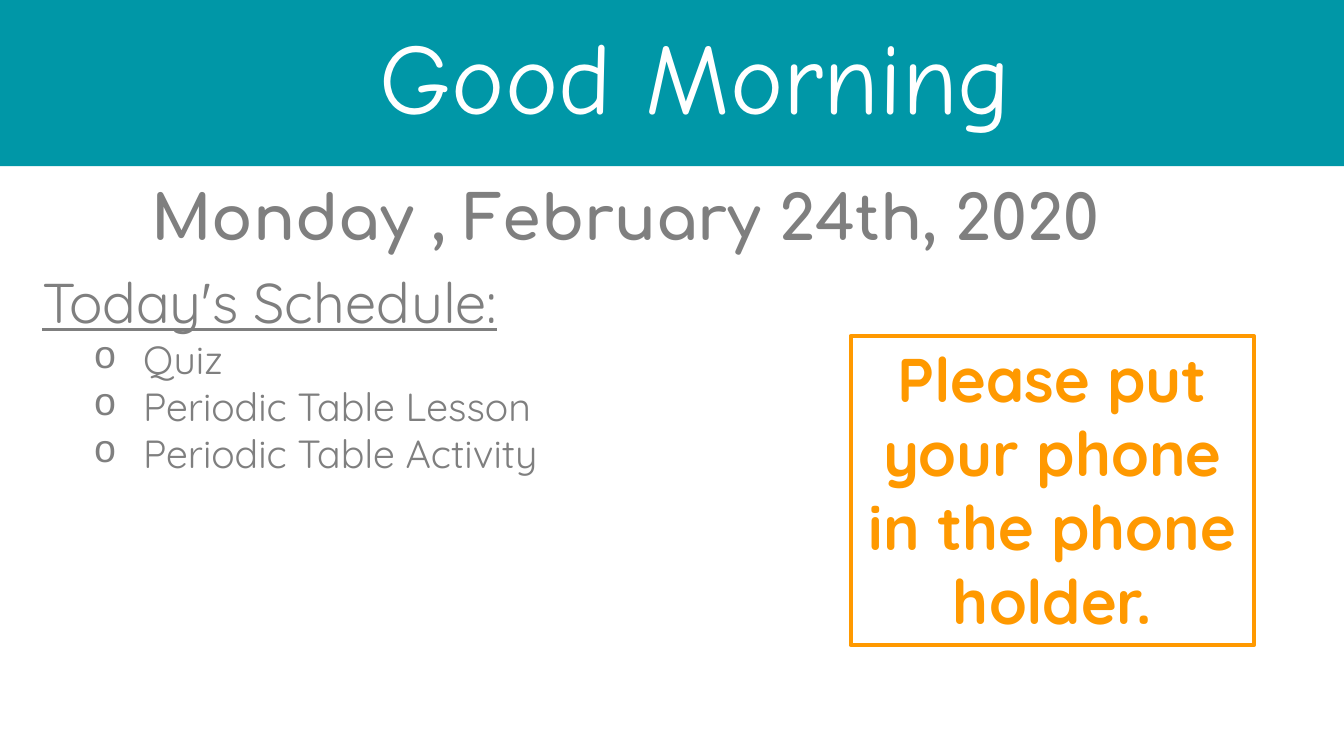
from lxml import etree
from pptx import Presentation
from pptx.dml.color import RGBColor
from pptx.enum.shapes import MSO_SHAPE
from pptx.enum.text import MSO_ANCHOR, PP_ALIGN
from pptx.oxml.ns import qn
from pptx.util import Inches, Pt

RECTANGLE = MSO_SHAPE.RECTANGLE
TOP, MIDDLE = MSO_ANCHOR.TOP, MSO_ANCHOR.MIDDLE
LEFT, CENTER = PP_ALIGN.LEFT, PP_ALIGN.CENTER

TEAL = RGBColor(0x00, 0x97, 0xA7)
GRAY = RGBColor(0x7F, 0x7F, 0x7F)
ORANGE = RGBColor(0xFF, 0x99, 0x00)
WHITE = RGBColor(0xFF, 0xFF, 0xFF)

WIDTH = 10
HEIGHT = WIDTH * 9 / 16
TITLE_FONT, DATE_FONT, BODY_FONT = "Comic Neue", "Comfortaa", "Quicksand"
BULLET_FONT = "Courier New"

TASKS = ["Quiz", "Periodic Table Lesson", "Periodic Table Activity"]


def inner_box(box, left, top, width, height):
    """Return the part of a box given by percentages of its width and height."""
    x, y, w, h = box
    return (x + left * w / 100, y + top * h / 100,
            width * w / 100, height * h / 100)


def set_frame(shape, anchor=TOP):
    frame = shape.text_frame
    frame.word_wrap = True
    frame.vertical_anchor = anchor
    frame.margin_left = frame.margin_right = Inches(0.07)
    frame.margin_top = frame.margin_bottom = Inches(0.04)
    return frame


def add_text_frame(page, box, anchor=TOP):
    return set_frame(page.shapes.add_textbox(*map(Inches, box)), anchor)


def add_rectangle(page, box):
    shape = page.shapes.add_shape(RECTANGLE, *map(Inches, box))
    shape.shadow.inherit = False
    return shape


def write(para, text, font=BODY_FONT, size=33, color=GRAY, bold=False,
          underline=False, align=LEFT, spacing=1.0):
    para.alignment = align
    para.line_spacing = spacing
    span = para.add_run()
    span.text = text
    span.font.name = font
    span.font.size = Pt(size)
    span.font.color.rgb = color
    span.font.bold = bold
    span.font.underline = underline


def add_bullet(para, color):
    para.level = 1
    props = para._p.get_or_add_pPr()
    props.set("marL", str(Inches(0.75)))
    props.set("indent", str(-Inches(0.37)))
    bullet_color = etree.SubElement(props, qn("a:buClr"))
    etree.SubElement(bullet_color, qn("a:srgbClr"), val=str(color))
    etree.SubElement(props, qn("a:buFont"), typeface=BULLET_FONT)
    etree.SubElement(props, qn("a:buChar"), char="o")


def build_banner(page, box):
    band = add_rectangle(page, box)
    band.fill.solid()
    band.fill.fore_color.rgb = TEAL
    band.line.fill.background()
    frame = add_text_frame(page, inner_box(box, 8.65, 5, 86.2, 88), MIDDLE)
    write(frame.paragraphs[0], "Good Morning", font=TITLE_FONT, size=54,
          color=WHITE, align=CENTER, spacing=0.9)


def build_schedule(page, box):
    frame = add_text_frame(page, box)
    write(frame.paragraphs[0], "Today's Schedule:", size=30, underline=True)
    for task in TASKS:
        para = frame.add_paragraph()
        write(para, task, size=21)
        add_bullet(para, GRAY)


def build_date(page, box):
    frame = add_text_frame(page, box)
    write(frame.paragraphs[0], "Monday , February 24th, 2020",
          font=DATE_FONT, bold=True)


def build_reminder(page, box):
    card = add_rectangle(page, box)
    card.fill.background()
    card.line.color.rgb = ORANGE
    card.line.width = Pt(2.25)
    frame = set_frame(card)
    write(frame.paragraphs[0], "Please put your phone in the phone holder.",
          color=ORANGE, bold=True, align=CENTER)


def main():
    deck = Presentation()
    deck.slide_width, deck.slide_height = Inches(WIDTH), Inches(HEIGHT)
    page = deck.slides.add_slide(deck.slide_layouts[6])
    slide_box = (0, 0, WIDTH, HEIGHT)

    # Title band, then the schedule, date and reminder below it
    build_banner(page, inner_box(slide_box, 0, 0, 100, 22))
    build_schedule(page, inner_box(slide_box, 2.45, 34.7, 56.1, 39.5))
    build_date(page, inner_box(slide_box, 10.55, 22.9, 82.9, 10.8))
    build_reminder(page, inner_box(slide_box, 63.3, 44.45, 30, 40.9))

    deck.save("out.pptx")


if __name__ == "__main__":
    main()
